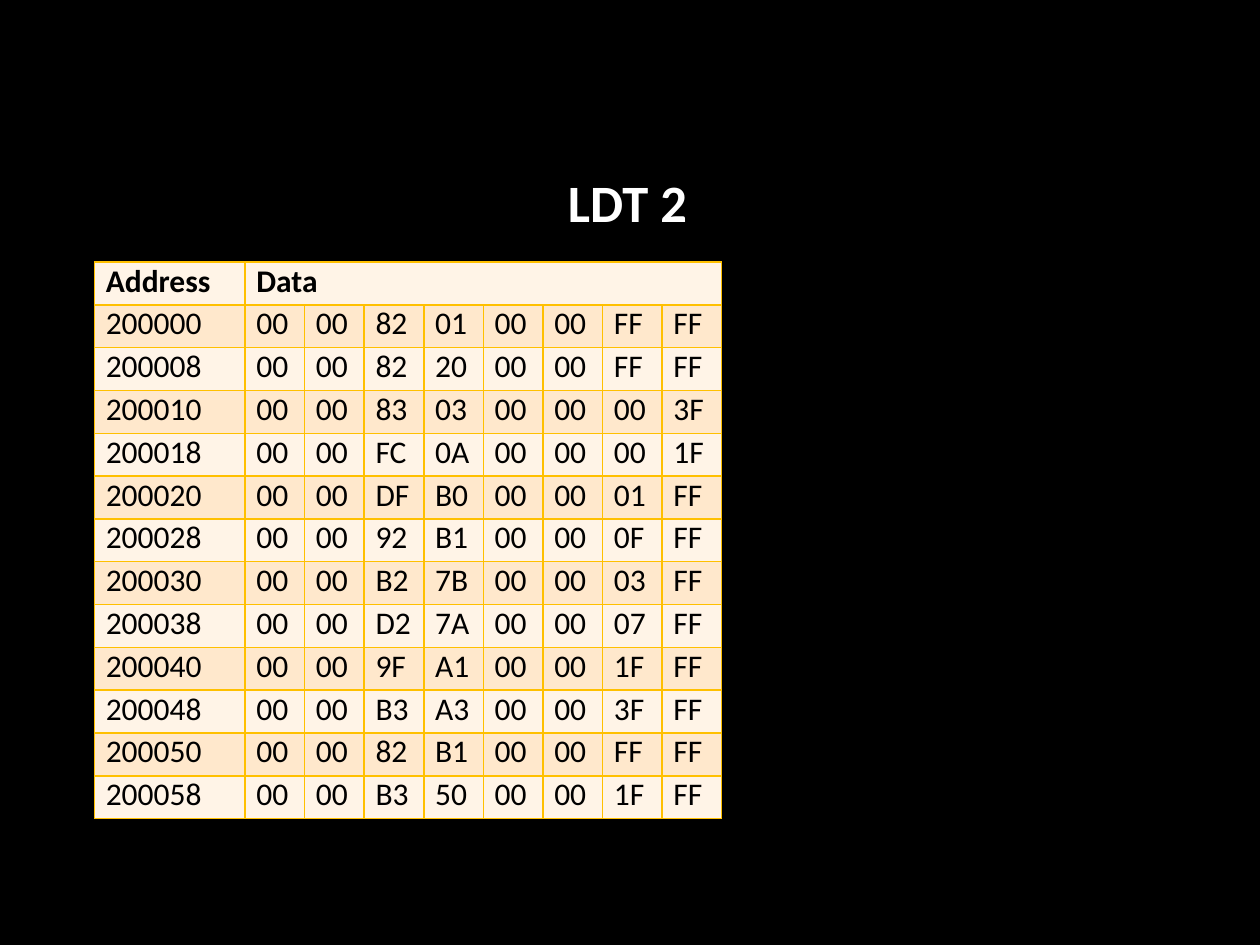
from dataclasses import dataclass

from lxml.etree import SubElement
from pptx import Presentation
from pptx.dml.color import RGBColor
from pptx.enum.text import MSO_ANCHOR, PP_ALIGN
from pptx.oxml.ns import qn
from pptx.util import Inches, Pt


@dataclass(frozen=True)
class Theme:
    font: str = "Calibri"
    background: str = "000000"
    title_color: str = "FFFFFF"
    text_color: str = "000000"
    border: str = "FFC000"
    bands: tuple = ("FFF4E7", "FFE8CC")
    title_size: int = 30
    table_size: int = 18
    border_width: int = 1


THEME = Theme()
TITLE = "LDT 2"
HEADERS = ("Address", "Data")
FIRST_ADDRESS = 0x200000
DESCRIPTORS = (
    "00 00 82 01 00 00 FF FF",
    "00 00 82 20 00 00 FF FF",
    "00 00 83 03 00 00 00 3F",
    "00 00 FC 0A 00 00 00 1F",
    "00 00 DF B0 00 00 01 FF",
    "00 00 92 B1 00 00 0F FF",
    "00 00 B2 7B 00 00 03 FF",
    "00 00 D2 7A 00 00 07 FF",
    "00 00 9F A1 00 00 1F FF",
    "00 00 B3 A3 00 00 3F FF",
    "00 00 82 B1 00 00 FF FF",
    "00 00 B3 50 00 00 1F FF",
)
BYTES = 8


def write_text(frame, text, *, size, color, bold=False, align=PP_ALIGN.LEFT):
    para = frame.paragraphs[0]
    para.alignment = align
    span = para.add_run()
    span.text = text
    span.font.name = THEME.font
    span.font.size = Pt(size)
    span.font.bold = bold
    span.font.color.rgb = RGBColor.from_string(color)


def draw_borders(cell):
    properties = cell._tc.get_or_add_tcPr()
    for side in ("a:lnL", "a:lnR", "a:lnT", "a:lnB"):
        line = SubElement(properties, qn(side), w=str(Pt(THEME.border_width)))
        fill = SubElement(line, qn("a:solidFill"))
        SubElement(fill, qn("a:srgbClr"), val=THEME.border)


def format_cell(cell, band):
    draw_borders(cell)
    cell.fill.solid()
    cell.fill.fore_color.rgb = RGBColor.from_string(THEME.bands[band % 2])
    cell.margin_left = Inches(0.09)
    cell.margin_right = cell.margin_top = cell.margin_bottom = 0


def place_title(page, box):
    title = page.shapes.title
    title.left, title.top, title.width, title.height = box
    title.text_frame.vertical_anchor = MSO_ANCHOR.TOP
    title.text_frame.word_wrap = True
    write_text(title.text_frame, TITLE, size=THEME.title_size,
               color=THEME.title_color, bold=True, align=PP_ALIGN.CENTER)


def place_descriptor_table(page, box):
    width, height = box[2:]
    address_width = int(width * 0.24)
    rows = [HEADERS]
    for index, descriptor in enumerate(DESCRIPTORS):
        address = f"{FIRST_ADDRESS + index * BYTES:06X}"
        rows.append((address, *descriptor.split()))

    table = page.shapes.add_table(len(rows), BYTES + 1, *box).table
    for index, column in enumerate(table.columns):
        column.width = (width - address_width) // BYTES if index else address_width
    for row in table.rows:
        row.height = height // len(rows)

    for row_index, values in enumerate(rows):
        for column_index in range(BYTES + 1):
            format_cell(table.cell(row_index, column_index), row_index)
        for column_index, value in enumerate(values):
            write_text(table.cell(row_index, column_index).text_frame, value,
                       size=THEME.table_size, color=THEME.text_color,
                       bold=row_index == 0)
    table.cell(0, 1).merge(table.cell(0, BYTES))


def main():
    deck = Presentation()
    deck.slide_width, deck.slide_height = Inches(10), Inches(7.5)
    page = deck.slides.add_slide(deck.slide_layouts.get_by_name("Title Only"))
    page.background.fill.solid()
    page.background.fill.fore_color.rgb = RGBColor.from_string(THEME.background)
    place_title(page, (Inches(3.9), Inches(1.3), Inches(2.16), Inches(0.61)))
    place_descriptor_table(
        page, (Inches(0.75), Inches(2.08), Inches(4.98), Inches(4.42)))
    deck.save("out.pptx")


if __name__ == "__main__":
    main()
